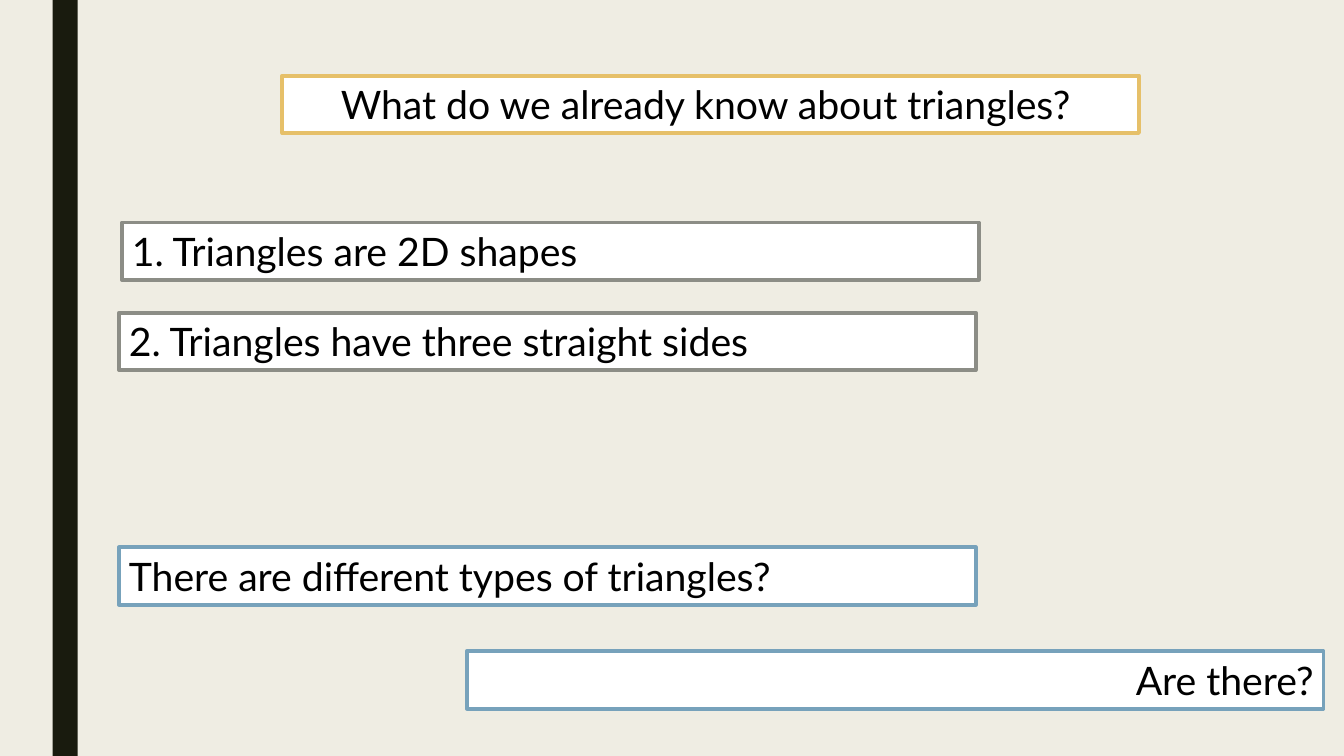
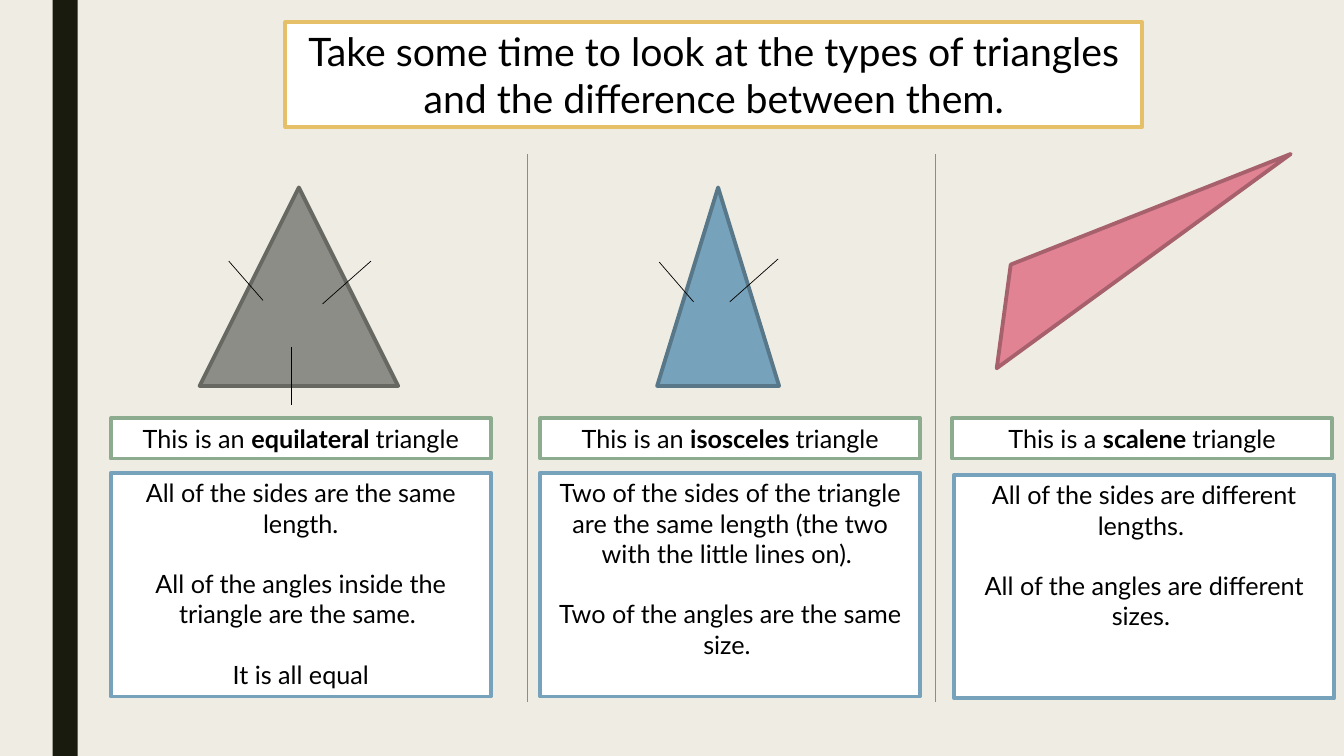
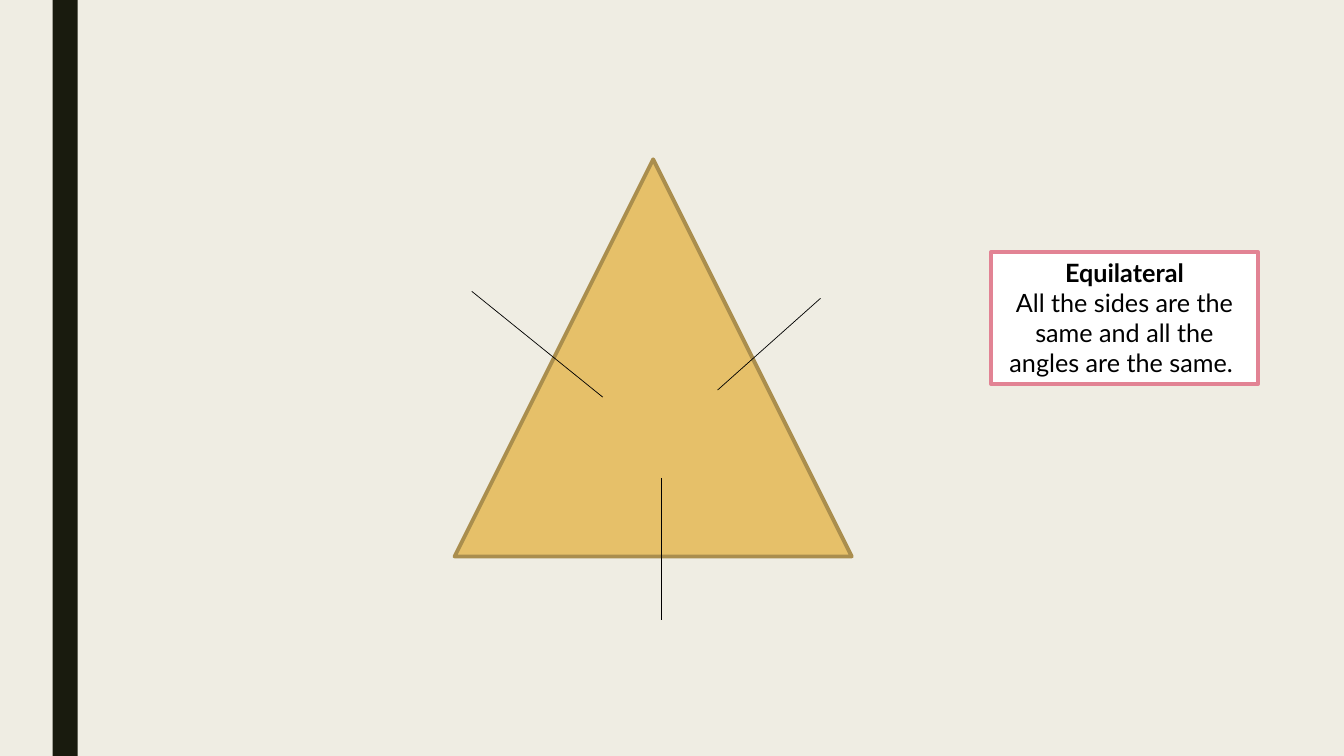
from dataclasses import dataclass

import lxml.etree
import pptx
import pptx.dml.color
import pptx.enum.shapes
import pptx.enum.text
import pptx.oxml.ns
import pptx.util

Pt = pptx.util.Pt
ALIGN = pptx.enum.text.PP_ALIGN
SHAPE = pptx.enum.shapes.MSO_SHAPE

FONT = "Lato"
BACKGROUND, BAND = "EFEDE3", "191B0E"
WHITE, BLACK = "FFFFFF", "000000"
GOLD, GREY, BLUE, GREEN, PINK = "E6C069", "8C8D86", "77A2BB", "8DAB8E", "E28394"
DARK_GOLD, DARK_GREY, DARK_BLUE, DARK_PINK = "AA8E4E", "686863", "58788A", "A7616D"
OUTLINE_WIDTH, THIN_WIDTH = 2.75, 0.5
TITLE_LAYOUT, BLANK_LAYOUT = 5, 6
BOX_WIDTH, BOX_HEIGHT = 612, 41
CARD_WIDTH, LABEL_HEIGHT, FACTS_HEIGHT = 271.4, 28.8, 159.8


@dataclass
class Box:
    """Outlined white text box; asterisks in the text enclose bold words."""
    left: float
    top: float
    width: float
    height: float
    outline: str
    paragraphs: list[str]
    size: float = 18
    align: int = ALIGN.CENTER
    gap: float = 0


@dataclass
class Triangle:
    left: float
    top: float
    width: float
    height: float
    fill: str
    outline: str


@dataclass
class Line:
    start: tuple[float, float]
    end: tuple[float, float]
    color: str = BLACK


@dataclass
class TriangleType:
    left: float
    label: str
    facts_left: float
    facts_top: float
    facts: list[str]


def rgb(color: str) -> pptx.dml.color.RGBColor:
    return pptx.dml.color.RGBColor.from_string(color)


def paint(shape, fill: str, outline: str | None) -> None:
    shape.fill.solid()
    shape.fill.fore_color.rgb = rgb(fill)
    if outline is None:
        shape.line.fill.background()
    else:
        shape.line.color.rgb = rgb(outline)
        shape.line.width = Pt(OUTLINE_WIDTH)


def add_preset(slide, preset, left: float, top: float, width: float, height: float,
               fill: str, outline: str | None):
    shape = slide.shapes.add_shape(preset, Pt(left), Pt(top), Pt(width), Pt(height))
    shape.shadow.inherit = False
    paint(shape, fill, outline)
    return shape


def write_text(shape, box: Box) -> None:
    frame = shape.text_frame
    frame.word_wrap = True
    frame.auto_size = pptx.enum.text.MSO_AUTO_SIZE.NONE
    frame.vertical_anchor = pptx.enum.text.MSO_ANCHOR.TOP
    for index, text in enumerate(box.paragraphs):
        paragraph = frame.add_paragraph() if index else frame.paragraphs[0]
        paragraph.alignment = box.align
        paragraph.space_before = Pt(box.gap if index else 0)
        for position, piece in enumerate(text.split("*")):
            if not piece:
                continue
            run = paragraph.add_run()
            run.text = piece
            run.font.name = FONT
            run.font.size = Pt(box.size)
            run.font.bold = position % 2 == 1
            run.font.color.rgb = rgb(BLACK)


def add_box(slide, box: Box) -> None:
    shape = add_preset(slide, SHAPE.RECTANGLE, box.left, box.top, box.width, box.height,
                       WHITE, box.outline)
    write_text(shape, box)


def add_title(slide, left: float, top: float, height: float, text: str) -> None:
    title = slide.shapes.title
    title.left, title.top = Pt(left), Pt(top)
    title.width, title.height = Pt(BOX_WIDTH), Pt(height)
    paint(title, WHITE, GOLD)
    write_text(title, Box(left, top, BOX_WIDTH, height, GOLD, [text], 28))


def add_triangle(slide, triangle: Triangle) -> None:
    add_preset(slide, SHAPE.ISOSCELES_TRIANGLE, triangle.left, triangle.top,
               triangle.width, triangle.height, triangle.fill, triangle.outline)


def add_line(slide, line: Line) -> None:
    connector = slide.shapes.add_connector(
        pptx.enum.shapes.MSO_CONNECTOR.STRAIGHT,
        *(Pt(value) for value in line.start + line.end))
    connector.line.color.rgb = rgb(line.color)
    connector.line.width = Pt(THIN_WIDTH)
    lxml.etree.SubElement(connector.element.spPr, pptx.oxml.ns.qn("a:effectLst"))


def add_slide(presentation, layout: int):
    return presentation.slides.add_slide(presentation.slide_layouts[layout])


def style_master(presentation, slide) -> None:
    """Give the master its background and the dark band behind all slides."""
    master = presentation.slide_master
    master.background.fill.solid()
    master.background.fill.fore_color.rgb = rgb(BACKGROUND)
    band = add_preset(slide, SHAPE.RECTANGLE, 37.5, 0, 18, 540, BAND, None)
    band.element.nvSpPr.cNvPr.set("id", "100")
    master.shapes.element.insert(2, band.element)


def build_question_slide(presentation) -> None:
    slide = add_slide(presentation, TITLE_LAYOUT)
    style_master(presentation, slide)
    add_title(slide, 201.6, 54, BOX_HEIGHT, "What do we already know about triangles? ")
    statements = [
        (87.1, 159, GREY, ALIGN.LEFT, "1. Triangles are 2D shapes"),
        (85, 223.4, GREY, ALIGN.LEFT, "2. Triangles have three straight sides"),
        (85, 391, BLUE, ALIGN.LEFT, "There are different types of triangles?"),
        (333.4, 465.2, BLUE, ALIGN.RIGHT, "Are there?"),
    ]
    for left, top, outline, align, text in statements:
        add_box(slide, Box(left, top, BOX_WIDTH, BOX_HEIGHT, outline, [text], 28, align))


def build_types_slide(presentation) -> None:
    slide = add_slide(presentation, TITLE_LAYOUT)
    add_title(slide, 203.8, 15.8, 75,
              "Take some time to look at the types of triangles "
              "and the difference between them.")

    # Column dividers
    for x in (376.6, 668.2):
        add_line(slide, Line((x, 110.2), (x, 501.1), GREY))

    # Triangles
    add_triangle(slide, Triangle(142.6, 133.9, 141.8, 141.8, GREY, DARK_GREY))
    add_triangle(slide, Triangle(469.4, 133.9, 87.1, 141.8, BLUE, DARK_BLUE))
    builder = slide.shapes.build_freeform(722.2, 188.6, scale=float(Pt(1)))
    builder.add_line_segments([(712.1, 262.8), (922.3, 110.2)], close=True)
    scalene = builder.convert_to_shape()
    scalene.shadow.inherit = False
    paint(scalene, PINK, DARK_PINK)

    # Marks on the equal sides
    for mark in (
        Line((163.4, 186.5), (187.9, 214.6)),
        Line((230.4, 217.1), (265, 186.5)),
        Line((208.1, 247.7), (208.1, 289.4)),
        Line((521.3, 215.6), (555.8, 185)),
        Line((470.9, 187.2), (495.4, 215.6)),
    ):
        add_line(slide, mark)

    # Labels and facts
    for kind in (
        TriangleType(79.2, "This is an *equilateral *triangle", 79.2, 337.7, [
            "All of the sides are the same length.",
            "All of the angles inside the triangle are the same. ",
            "It is all equal"]),
        TriangleType(385.9, "This is an *isosceles *triangle", 385.9, 337.7, [
            "Two of the sides of the triangle are the same length "
            "(the two with the little lines on). ",
            "Two of the angles are the same size. "]),
        TriangleType(680.1, "This is a *scalene *triangle", 681.6, 339.1, [
            "All of the sides are different lengths. ",
            "All of the angles are different sizes. "]),
    ):
        add_box(slide, Box(kind.left, 298.8, CARD_WIDTH, LABEL_HEIGHT, GREEN, [kind.label]))
        add_box(slide, Box(kind.facts_left, kind.facts_top, CARD_WIDTH, FACTS_HEIGHT,
                           BLUE, kind.facts, gap=21.6))


def build_equilateral_slide(presentation) -> None:
    slide = add_slide(presentation, BLANK_LAYOUT)
    add_box(slide, Box(707.8, 180, 190.8, 94.4, PINK, [
        "*Equilateral*",
        "All the sides are the same and all the angles are the same. "]))
    add_triangle(slide, Triangle(324.7, 113.8, 283.7, 283.7, GOLD, DARK_GOLD))
    for mark in (
        Line((337, 208.1), (430.6, 283.7)),
        Line((586.1, 213.1), (512.6, 278.6)),
        Line((472.3, 341.3), (472.3, 442.8)),
    ):
        add_line(slide, mark)


def main() -> None:
    presentation = pptx.Presentation()
    presentation.slide_width, presentation.slide_height = Pt(960), Pt(540)
    build_question_slide(presentation)
    build_types_slide(presentation)
    build_equilateral_slide(presentation)
    presentation.save("out.pptx")


if __name__ == "__main__":
    main()
